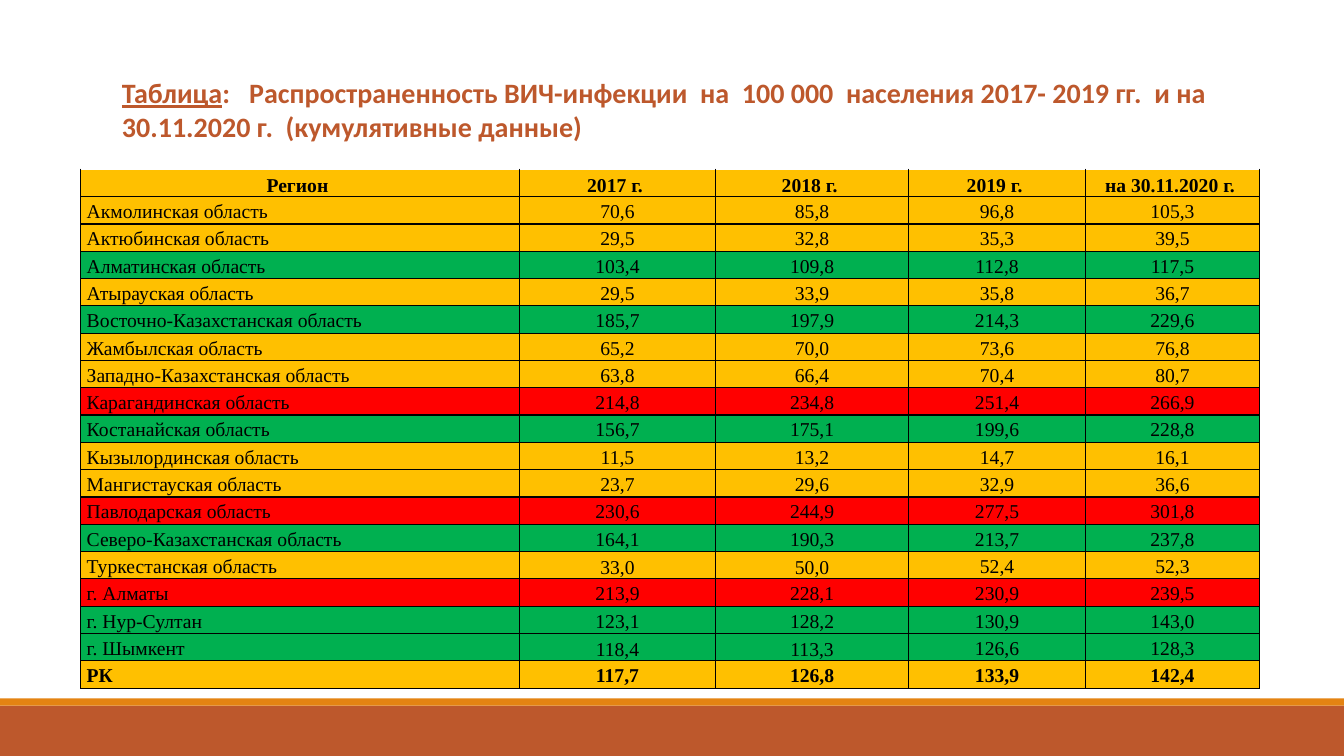
from lxml import etree
from pptx import Presentation
from pptx.dml.color import RGBColor
from pptx.enum.shapes import MSO_SHAPE
from pptx.enum.text import MSO_ANCHOR, PP_ALIGN
from pptx.oxml.ns import qn
from pptx.util import Inches, Pt

RECT = MSO_SHAPE.RECTANGLE
TOP, MIDDLE, BOTTOM = MSO_ANCHOR.TOP, MSO_ANCHOR.MIDDLE, MSO_ANCHOR.BOTTOM
LEFT, CENTER = PP_ALIGN.LEFT, PP_ALIGN.CENTER

RUST = RGBColor(0xBD, 0x58, 0x2C)
ORANGE = RGBColor(0xE4, 0x83, 0x12)
BLACK = RGBColor(0, 0, 0)
GOLD = RGBColor(0xFF, 0xC0, 0x00)
GREEN = RGBColor(0x00, 0xB0, 0x50)
RED = RGBColor(0xFF, 0x00, 0x00)

TITLE = [
    ("Таблица", True),
    (":   Распространенность ВИЧ-инфекции  на  100 000  населения "
     "2017- 2019 гг.  и на 30.11.2020 г.  (кумулятивные данные)", False),
]
HEAD = ("Регион ", "2017 г. ", "2018 г. ", "2019 г. ", "на 30.11.2020 г. ")
ROWS = [
    (GOLD, HEAD),
    (GOLD, ("Акмолинская область", "70,6", "85,8", "96,8", "105,3")),
    (GOLD, ("Актюбинская область", "29,5", "32,8", "35,3", "39,5")),
    (GREEN, ("Алматинская область", "103,4", "109,8", "112,8", "117,5")),
    (GOLD, ("Атырауская область", "29,5", "33,9", "35,8", "36,7")),
    (GREEN, ("Восточно-Казахстанская область", "185,7", "197,9", "214,3", "229,6")),
    (GOLD, ("Жамбылская область", "65,2", "70,0", "73,6", "76,8")),
    (GOLD, ("Западно-Казахстанская область", "63,8", "66,4", "70,4", "80,7")),
    (RED, ("Карагандинская область", "214,8", "234,8", "251,4", "266,9")),
    (GREEN, ("Костанайская область", "156,7", "175,1", "199,6", "228,8")),
    (GOLD, ("Кызылординская область", "11,5", "13,2", "14,7", "16,1")),
    (GOLD, ("Мангистауская область", "23,7", "29,6", "32,9", "36,6")),
    (RED, ("Павлодарская область", "230,6", "244,9", "277,5", "301,8")),
    (GREEN, ("Северо-Казахстанская область", "164,1", "190,3", "213,7", "237,8")),
    (GOLD, ("Туркестанская область", "33,0", "50,0", "52,4", "52,3")),
    (RED, ("г. Алматы", "213,9", "228,1", "230,9", "239,5")),
    (GREEN, ("г. Нур-Султан", "123,1", "128,2", "130,9", "143,0")),
    (GREEN, ("г. Шымкент", "118,4", "113,3", "126,6", "128,3")),
    (GOLD, ("РК", "117,7", "126,8", "133,9", "142,4")),
]
LOW = ("Туркестанская область", "г. Шымкент")
WIDTHS = (4.35, 1.95, 1.91, 1.76, 1.72)
BANDS = [(7, 0.5, RUST), (6.93, 0.07, ORANGE)]

TITLE_FONT = {"name": "Calibri", "size": Pt(20), "bold": True}
CELL_FONT = {"name": "Times New Roman", "size": Pt(14)}
CELL_FORM = {"margin_left": Inches(0.06), "margin_right": Inches(0.06),
             "margin_top": 0, "margin_bottom": 0}


def apply(target, form):
    for key, value in form.items():
        setattr(target, key, value)


def style(font, form, color):
    apply(font, form)
    font.color.rgb = color


def border(cell, sides):
    props = cell._tc.get_or_add_tcPr()
    for spot, side in enumerate(sides):
        line = etree.Element(qn("a:ln" + side), w=str(Pt(1)))
        fill = etree.SubElement(line, qn("a:solidFill"))
        etree.SubElement(fill, qn("a:srgbClr"), val=str(BLACK))
        props.insert(spot, line)


def add_bands(slide, width):
    for top, height, color in BANDS:
        band = slide.shapes.add_shape(RECT, 0, Inches(top), width, Inches(height))
        band.shadow.inherit = False
        band.fill.solid()
        band.fill.fore_color.rgb = color
        band.line.fill.background()


def add_title(slide):
    title = slide.shapes.title
    apply(title, {"left": Inches(1.11), "top": Inches(0.7),
                  "width": Inches(11.45), "height": Inches(1.11)})
    frame = title.text_frame
    apply(frame, {"word_wrap": True, "vertical_anchor": TOP})
    para = frame.paragraphs[0]
    apply(para, {"alignment": LEFT, "line_spacing": 1.0})
    for text, under in TITLE:
        run = para.add_run()
        run.text = text
        style(run.font, TITLE_FONT, RUST)
        run.font.underline = under


def add_grid(slide):
    table = slide.shapes.add_table(
        len(ROWS), len(WIDTHS), Inches(0.8), Inches(1.68),
        Inches(sum(WIDTHS)), Inches(5.15)).table
    apply(table, {"first_row": False, "horz_banding": False})
    for column, width in zip(table.columns, WIDTHS):
        column.width = Inches(width)
    for r, (color, texts) in enumerate(ROWS):
        head = r == 0
        for c, text in enumerate(texts):
            cell = table.cell(r, c)
            low = head or (texts[0] in LOW and c in (1, 2))
            apply(cell, CELL_FORM)
            cell.vertical_anchor = BOTTOM if low else MIDDLE
            cell.fill.solid()
            cell.fill.fore_color.rgb = color
            border(cell, "LRB" if head else "LRTB")
            para = cell.text_frame.paragraphs[0]
            para.alignment = CENTER if head or c else LEFT
            para.line_spacing = 1.15
            run = para.add_run()
            run.text = text
            style(run.font, CELL_FONT, BLACK)
            run.font.bold = r in (0, len(ROWS) - 1)


def main():
    deck = Presentation()
    deck.slide_width, deck.slide_height = Inches(13.33), Inches(7.5)
    slide = deck.slides.add_slide(deck.slide_layouts[5])
    add_bands(slide, deck.slide_width)
    add_title(slide)
    add_grid(slide)
    deck.save("out.pptx")


if __name__ == "__main__":
    main()
